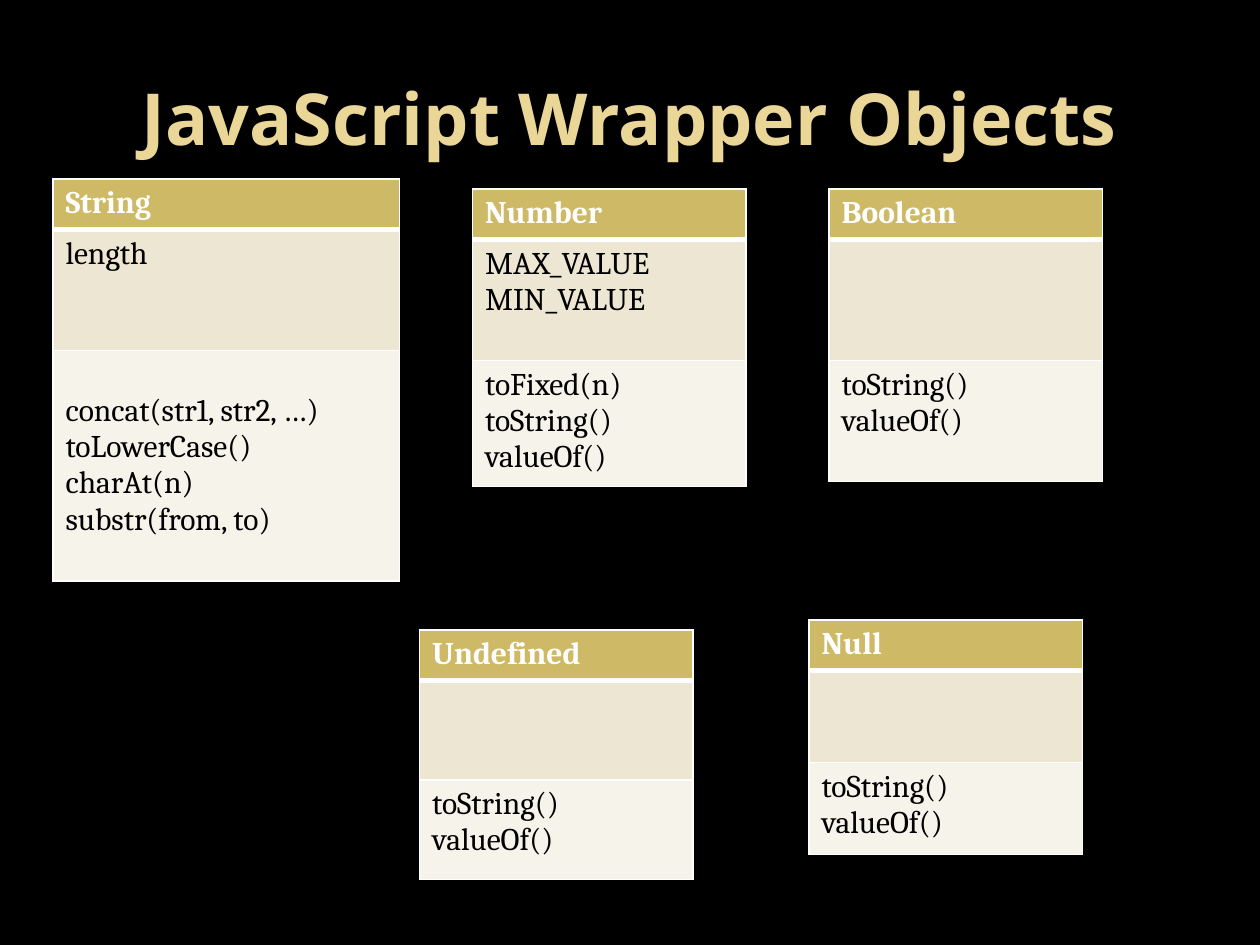
from lxml import etree
from pptx import Presentation
from pptx.dml.color import RGBColor
from pptx.enum.text import MSO_ANCHOR as Anchor, PP_ALIGN as Align
from pptx.oxml.ns import qn
from pptx.util import Inches, Pt

BLACK = RGBColor(0x00, 0x00, 0x00)
WHITE = RGBColor(0xFF, 0xFF, 0xFF)
TITLE_GOLD = RGBColor(0xEA, 0xD6, 0x96)
HEADER_GOLD = RGBColor(0xCE, 0xB9, 0x66)
PROPERTY_BEIGE = RGBColor(0xED, 0xE6, 0xD3)
METHOD_CREAM = RGBColor(0xF6, 0xF3, 0xEA)

TITLE_FONT = {"name": "Open Sans", "size": Pt(41), "bold": True}
HEADER_FONT = {"name": "Cambria", "size": Pt(18), "bold": True}
BODY_FONT = {"name": "Cambria", "size": Pt(18), "bold": False}

# Fill, text colour and font of the name, property and method rows
ROW_STYLES = [
    (HEADER_GOLD, WHITE, HEADER_FONT),
    (PROPERTY_BEIGE, BLACK, BODY_FONT),
    (METHOD_CREAM, BLACK, BODY_FONT),
]

COMMON_METHODS = ["toString()", "valueOf()"]

# Name, properties, methods, (left, top, width), row heights
WRAPPERS = [
    ("Number", ["MAX_VALUE", "MIN_VALUE"], ["toFixed(n)"] + COMMON_METHODS,
     (3.75, 1.5, 2.17), (0.38, 0.96, 0.96)),
    ("String", ["length"],
     ["concat(str1, str2, …)", "toLowerCase()", "charAt(n)", "substr(from, to)"],
     (0.42, 1.42, 2.75), (0.38, 0.96, 1.83)),
    ("Undefined", [], COMMON_METHODS, (3.33, 5, 2.17), (0.39, 0.79, 0.79)),
    ("Null", [], COMMON_METHODS, (6.42, 4.92, 2.17), (0.38, 0.73, 0.73)),
    ("Boolean", [], COMMON_METHODS, (6.58, 1.5, 2.17), (0.38, 0.96, 0.96)),
]


def format_font(font, settings, color):
    for name, value in settings.items():
        setattr(font, name, value)
    font.color.rgb = color


def write_lines(text_frame, lines, settings, color):
    for index, line in enumerate(lines or [""]):
        paragraph = text_frame.paragraphs[0] if index == 0 else text_frame.add_paragraph()
        paragraph.text = line
        format_font(paragraph.font, settings, color)
        for run in paragraph.runs:
            format_font(run.font, settings, color)


def add_borders(cell, widths):
    """Draw white cell edges; widths maps an edge tag to points."""
    properties = cell._tc.get_or_add_tcPr()
    for edge, width in widths.items():
        line = etree.SubElement(properties, qn(f"a:{edge}"), w=str(Pt(width)))
        fill = etree.SubElement(line, qn("a:solidFill"))
        etree.SubElement(fill, qn("a:srgbClr"), val=str(WHITE))


def add_title(slide, text):
    box = slide.shapes.add_textbox(Inches(0.5), Inches(0.3), Inches(9), Inches(1.25))
    frame = box.text_frame
    frame.word_wrap = True
    frame.vertical_anchor = Anchor.MIDDLE
    write_lines(frame, [text], TITLE_FONT, TITLE_GOLD)
    frame.paragraphs[0].alignment = Align.CENTER


def add_wrapper(slide, name, properties, methods, place, heights):
    left, top, width = map(Inches, place)
    table = slide.shapes.add_table(3, 1, left, top, width, Inches(sum(heights))).table
    contents = [[name], properties, methods]
    for index, (lines, style, height) in enumerate(zip(contents, ROW_STYLES, heights)):
        fill_color, text_color, settings = style
        table.rows[index].height = Inches(height)
        cell = table.cell(index, 0)
        # The rule under the name row is heavier than the other edges
        add_borders(cell, {"lnL": 1, "lnR": 1,
                           "lnT": 3 if index == 1 else 1,
                           "lnB": 3 if index == 0 else 1})
        cell.fill.solid()
        cell.fill.fore_color.rgb = fill_color
        write_lines(cell.text_frame, lines, settings, text_color)
    # The long method list sits in the middle of its tall row
    if len(methods) > 3:
        table.cell(2, 0).vertical_anchor = Anchor.MIDDLE


def main():
    presentation = Presentation()
    presentation.slide_width = Inches(10)
    presentation.slide_height = Inches(7.5)
    slide = presentation.slides.add_slide(presentation.slide_layouts[6])

    # Background
    background = slide.background.fill
    background.solid()
    background.fore_color.rgb = BLACK

    # Title and one table per wrapper object
    add_title(slide, "JavaScript Wrapper Objects")
    for wrapper in WRAPPERS:
        add_wrapper(slide, *wrapper)

    presentation.save("out.pptx")


if __name__ == "__main__":
    main()
